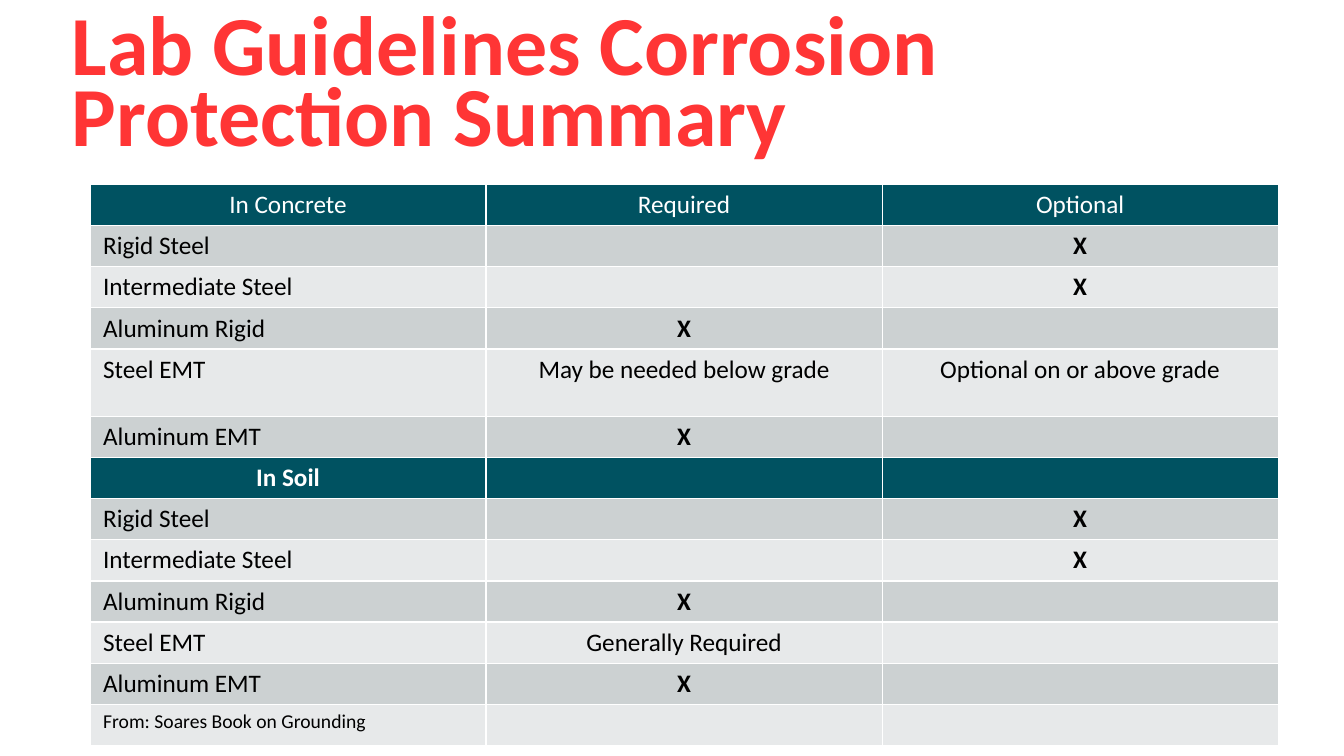
from pptx import Presentation
from pptx.dml.color import RGBColor
from pptx.enum.text import MSO_ANCHOR, MSO_AUTO_SIZE, PP_ALIGN
from pptx.oxml import parse_xml
from pptx.oxml.ns import nsdecls
from pptx.util import Cm, Pt

LEFT, CENTER = PP_ALIGN.LEFT, PP_ALIGN.CENTER
MIDDLE = MSO_ANCHOR.MIDDLE
NO_FIT = MSO_AUTO_SIZE.NONE

ROWS = [
    ("In Concrete", "Required", "Optional"),
    ("Rigid Steel", "", "X"),
    ("Intermediate Steel", "", "X"),
    ("Aluminum Rigid", "X", ""),
    ("Steel EMT", "May be needed below grade", "Optional on or above grade"),
    ("Aluminum EMT", "X", ""),
    ("In Soil", "", ""),
    ("Rigid Steel", "", "X"),
    ("Intermediate Steel", "", "X"),
    ("Aluminum Rigid", "X", ""),
    ("Steel EMT", "Generally Required", ""),
    ("Aluminum EMT", "X", ""),
    ("From: Soares Book on Grounding", "", ""),
]
HEADS = (0, 6)
TALL = 4
NOTE = len(ROWS) - 1


def color(text):
    return RGBColor.from_string(text)


class Deck:
    font = "Calibri"
    red, teal = "FF3535", "005261"
    white, black = "FFFFFF", "000000"
    bands = ("E7E9EA", "CCD1D2")

    def __init__(self):
        self.prs = Presentation()
        self.prs.slide_width = Cm(33.87)
        self.prs.slide_height = Cm(19.05)
        self.slide = self.prs.slides.add_slide(self.prs.slide_layouts[5])

    def style(self, font, size, ink, bold):
        font.name = self.font
        font.size = Pt(size)
        font.bold = bold
        font.color.rgb = color(ink)

    def title(self, text, left, top, width, height):
        shape = self.slide.shapes.title
        shape.left, shape.top = Cm(left), Cm(top)
        shape.width, shape.height = Cm(width), Cm(height)
        frame = shape.text_frame
        frame.text = text
        frame.word_wrap = True
        frame.auto_size = NO_FIT
        frame.vertical_anchor = MIDDLE
        para = frame.paragraphs[0]
        para.alignment = LEFT
        para.line_spacing = 0.7
        self.style(para.runs[0].font, 60, self.red, True)

    def border(self, cell):
        props = cell._tc.get_or_add_tcPr()
        for side in "LRTB":
            props.append(parse_xml(
                f'<a:ln{side} {nsdecls("a")} w="12700"><a:solidFill>'
                f'<a:srgbClr val="{self.white}"/></a:solidFill></a:ln{side}>'))

    def cell(self, cell, text, fill, ink, size, bold, align):
        self.border(cell)
        cell.fill.solid()
        cell.fill.fore_color.rgb = color(fill)
        cell.margin_left = cell.margin_right = Cm(0.33)
        cell.margin_top = cell.margin_bottom = Cm(0.13)
        cell.text = text
        para = cell.text_frame.paragraphs[0]
        para.alignment = align
        for run in para.runs:
            self.style(run.font, size, ink, bold)

    def table(self, rows, left, top, width, step, tall):
        high = step * (len(rows) - 1) + tall
        table = self.slide.shapes.add_table(
            len(rows), len(rows[0]), Cm(left), Cm(top), Cm(width), Cm(high)).table
        table.first_row = table.horz_banding = False
        for col in table.columns:
            col.width = Cm(width / len(rows[0]))
        for r, row in enumerate(rows):
            table.rows[r].height = Cm(tall if r == TALL else step)
            head = r in HEADS
            fill = self.teal if head else self.bands[r % 2]
            ink = self.white if head else self.black
            size = 14 if r == NOTE else 18
            for c, text in enumerate(row):
                align = CENTER if head or c else LEFT
                bold = text in ("X", "In Soil")
                self.cell(table.cell(r, c), text, fill, ink, size, bold, align)


def main():
    deck = Deck()
    deck.title("Lab Guidelines Corrosion Protection Summary", 1.55, 0.99, 30.76, 2.54)
    deck.table(ROWS, 2.27, 4.65, 29.94, 0.97, 1.7)
    deck.prs.save("out.pptx")


if __name__ == "__main__":
    main()
